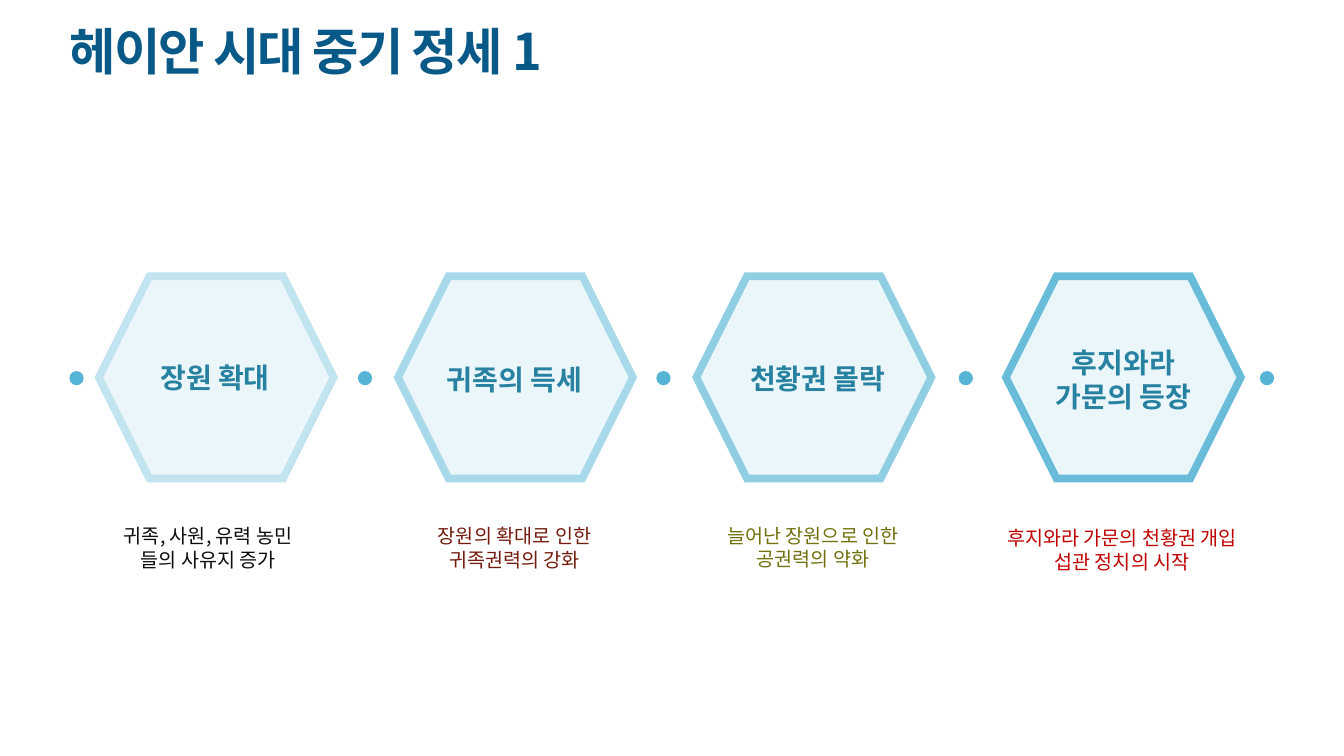
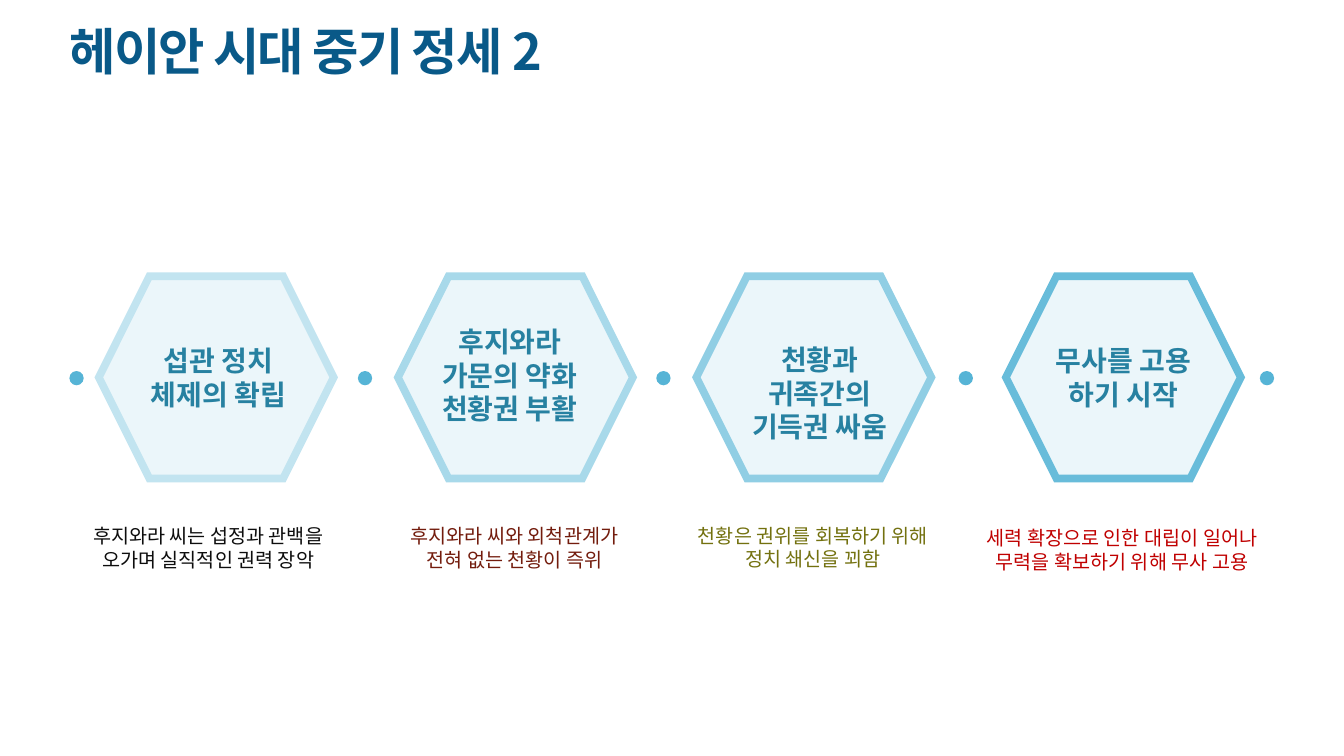
from dataclasses import dataclass

from lxml import etree
from pptx import Presentation
from pptx import util as u
from pptx.dml.color import RGBColor
from pptx.enum import shapes, text
from pptx.oxml.ns import qn


@dataclass(frozen=True)
class Theme:
    font: str = "Noto Sans CJK KR"
    title: str = "095988"
    heading: str = "2781A1"
    hexagon: str = "EBF6FA"
    dot: str = "56B4D6"
    outlines: tuple = ("C2E4F0", "A8D9EA", "90CEE4", "68BCDA")
    captions: tuple = ("0D0D0D", "731C0D", "73710F", "C00000")
    title_size: int = 36
    heading_size: int = 20
    caption_size: int = 14
    outline_width: float = 5.5


THEME = Theme()

# Shared layout, in centimetres
HEXAGON_LEFTS = (2.49, 10.03, 17.55, 25.35)
HEXAGON_TOP, HEXAGON_WIDTH, HEXAGON_HEIGHT = 6.96, 5.92, 5.1
DOT_LEFTS = (1.75, 9.02, 16.54, 24.16, 31.75)
DOT_TOP, DOT_SIZE = 9.35, 0.36
CAPTION_CENTERS = (5.25, 12.97, 20.49, 28.28)
CAPTION_TOPS = (13.08, 13.08, 13.07, 13.13)
CAPTION_WIDTH, CAPTION_HEIGHT = 8.2, 1.45
HEADING_WIDTH, HEADING_LINE = 5.4, 0.86

# Each step: heading, heading centre, heading top, caption
SLIDES = (
    ("헤이안 시대 중기 정세 1", (
        ("장원 확대", 5.42, 8.97, "귀족, 사원, 유력 농민\n들의 사유지 증가"),
        ("귀족의 득세", 12.97, 9.02, "장원의 확대로 인한\n귀족권력의 강화"),
        ("천황권 몰락", 20.61, 8.99, "늘어난 장원으로 인한\n공권력의 약화"),
        ("후지와라\n가문의 등장", 28.31, 8.59,
         "후지와라 가문의 천황권 개입\n섭관 정치의 시작"),
    )),
    ("헤이안 시대 중기 정세 2", (
        ("섭관 정치\n체제의 확립", 5.51, 8.53,
         "후지와라 씨는 섭정과 관백을\n오가며 실직적인 권력 장악"),
        ("후지와라\n가문의 약화\n천황권 부활", 12.85, 8.05,
         "후지와라 씨와 외척관계가\n전혀 없는 천황이 즉위"),
        ("천황과\n귀족간의\n기득권 싸움", 20.66, 8.51,
         "천황은 권위를 회복하기 위해\n정치 쇄신을 꾀함"),
        ("무사를 고용\n하기 시작", 28.31, 8.53,
         "세력 확장으로 인한 대립이 일어나\n무력을 확보하기 위해 무사 고용"),
    )),
)


def add_text(slide, box, content, size, color, bold=False,
             align=text.PP_ALIGN.CENTER):
    """Add a text box with one paragraph for each line of content."""
    shape = slide.shapes.add_textbox(*(u.Cm(length) for length in box))
    frame = shape.text_frame
    frame.word_wrap = True
    frame.text = content
    for paragraph in frame.paragraphs:
        paragraph.alignment = align
        font = paragraph.font
        font.name, font.size, font.bold = THEME.font, u.Pt(size), bold
        font.color.rgb = RGBColor.from_string(color)
        # Hangul takes the East Asian typeface
        defaults = paragraph._p.get_or_add_pPr().find(qn("a:defRPr"))
        etree.SubElement(defaults, qn("a:ea"), typeface=THEME.font)
    return frame


def add_title(slide, content):
    frame = add_text(slide, (1.5, 0.33, 26.31, 2.08), content,
                     THEME.title_size, THEME.title, True, text.PP_ALIGN.LEFT)
    frame.vertical_anchor = text.MSO_ANCHOR.MIDDLE
    paragraph = frame.paragraphs[0]
    paragraph.line_spacing = 0.9
    # Tighten the letter spacing by 1.2 pt
    paragraph.runs[0]._r.get_or_add_rPr().set("spc", "-120")


def add_filled_shape(slide, kind, box, color):
    shape = slide.shapes.add_shape(kind, *(u.Cm(length) for length in box))
    shape.shadow.inherit = False
    shape.fill.solid()
    shape.fill.fore_color.rgb = RGBColor.from_string(color)
    shape.line.fill.background()
    return shape


def add_hexagon(slide, left, outline):
    shape = add_filled_shape(
        slide, shapes.MSO_SHAPE.HEXAGON,
        (left, HEXAGON_TOP, HEXAGON_WIDTH, HEXAGON_HEIGHT), THEME.hexagon)
    shape.line.color.rgb = RGBColor.from_string(outline)
    shape.line.width = u.Pt(THEME.outline_width)
    # Sharp corners
    line = shape._element.spPr.find(qn("a:ln"))
    etree.SubElement(line, qn("a:miter"), lim="800000")


def add_heading(slide, content, center, top):
    height = HEADING_LINE * len(content.splitlines()) + 0.25
    add_text(slide, (center - HEADING_WIDTH / 2, top, HEADING_WIDTH, height),
             content, THEME.heading_size, THEME.heading, True)


def add_caption(slide, content, center, top, color):
    add_text(slide, (center - CAPTION_WIDTH / 2, top, CAPTION_WIDTH,
                     CAPTION_HEIGHT), content, THEME.caption_size, color)


def add_process_slide(presentation, title, steps):
    slide = presentation.slides.add_slide(presentation.slide_layouts[6])
    add_title(slide, title)
    # Hexagons and the dots between them
    for left, outline in zip(HEXAGON_LEFTS, THEME.outlines):
        add_hexagon(slide, left, outline)
    for left in DOT_LEFTS:
        add_filled_shape(slide, shapes.MSO_SHAPE.OVAL,
                         (left, DOT_TOP, DOT_SIZE, DOT_SIZE), THEME.dot)
    # Headings inside the hexagons, captions below
    for step, center, top, color in zip(
            steps, CAPTION_CENTERS, CAPTION_TOPS, THEME.captions):
        heading, heading_center, heading_top, caption = step
        add_caption(slide, caption, center, top, color)
        add_heading(slide, heading, heading_center, heading_top)


def main():
    presentation = Presentation()
    presentation.slide_width = u.Cm(33.87)
    presentation.slide_height = u.Cm(19.05)
    for title, steps in SLIDES:
        add_process_slide(presentation, title, steps)
    presentation.save("out.pptx")


if __name__ == "__main__":
    main()
